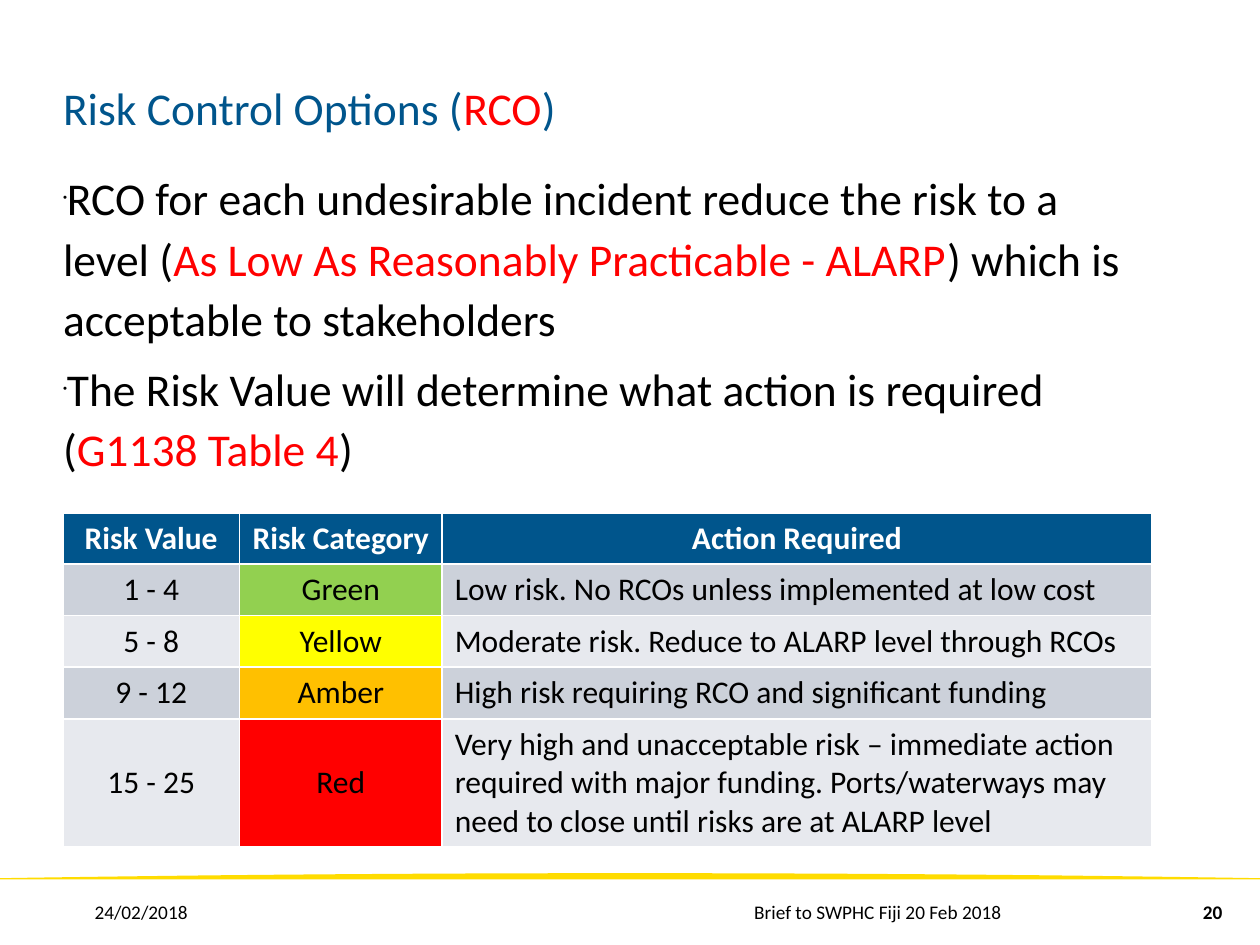
from lxml.etree import SubElement
from pptx import Presentation
from pptx.dml.color import RGBColor
from pptx.enum.text import MSO_ANCHOR, MSO_AUTO_SIZE, PP_ALIGN
from pptx.oxml.ns import qn
from pptx.util import Inches, Pt

BLUE, RED, BLACK, WHITE = "00558C", "FF0000", "000000", "FFFFFF"
GOLD = "FFDC00"
BANDS = ("CCD1DA", "E7E9EE")
LEFT, MID, RIGHT = PP_ALIGN.LEFT, PP_ALIGN.CENTER, PP_ALIGN.RIGHT

POINTS = [
    [("RCO for each undesirable incident reduce the risk to a level (", BLACK),
     ("As Low As Reasonably Practicable - ALARP", RED),
     (") which is acceptable to stakeholders", BLACK)],
    [("The Risk Value will determine what action is required (", BLACK),
     ("G1138 Table 4", RED), (")", BLACK)],
]
HEADS = ("Risk Value", "Risk Category", "Action Required")
RISKS = [
    ("1 - 4", "Green", "92D050", "Low risk. No RCOs unless implemented at low cost"),
    ("5 - 8", "Yellow", "FFFF00", "Moderate risk. Reduce to ALARP level through RCOs"),
    ("9 - 12", "Amber", "FFC000", "High risk requiring RCO and significant funding"),
    ("15 - 25", "Red", RED,
     "Very high and unacceptable risk – immediate action required with major "
     "funding. Ports/waterways may need to close until risks are at ALARP level"),
]


def color(code):
    return RGBColor.from_string(code)


def apply(item, values):
    for name, value in values.items():
        setattr(item, name, value)


def place(shape, box):
    names = ("left", "top", "width", "height")
    apply(shape, dict(zip(names, map(Inches, box))))


def write(para, runs, size, bold=False, align=LEFT):
    """Fill a paragraph with (text, colour) runs."""
    para.alignment = align
    for text, code in runs:
        run = para.add_run()
        run.text = text
        apply(run.font, {"name": "Calibri", "size": Pt(size), "bold": bold})
        run.font.color.rgb = color(code)


def set_frame(frame, anchor):
    apply(frame, {
        "margin_left": 0, "margin_top": 0, "margin_right": 0, "margin_bottom": 0,
        "word_wrap": True, "auto_size": MSO_AUTO_SIZE.NONE,
        "vertical_anchor": anchor,
    })


def add_dot(para):
    """Give a paragraph a tiny bullet with no indent."""
    props = para._p.get_or_add_pPr()
    apply_xml = {"marL": "0", "indent": "0"}
    for name, value in apply_xml.items():
        props.set(name, value)
    for tag, name, value in (("a:buSzPct", "val", "25000"),
                             ("a:buFont", "typeface", "Arial"),
                             ("a:buChar", "char", "•")):
        SubElement(props, qn(tag)).set(name, value)


def add_title(slide, box):
    title = slide.shapes.title
    place(title, box)
    set_frame(title.text_frame, MSO_ANCHOR.BOTTOM)
    runs = [("Risk Control Options (", BLUE), ("RCO", RED), (")", BLUE)]
    write(title.text_frame.paragraphs[0], runs, 26)


def add_body(slide, box):
    body = slide.placeholders[1]
    place(body, box)
    frame = body.text_frame
    set_frame(frame, MSO_ANCHOR.TOP)
    for i, runs in enumerate(POINTS):
        para = frame.add_paragraph() if i else frame.paragraphs[0]
        add_dot(para)
        apply(para, {"line_spacing": 1.1, "space_before": Pt(0),
                     "space_after": Pt(6)})
        write(para, runs, 26)


def fill_cell(cell, text, fill, code=BLACK, bold=False, align=MID):
    cell.fill.solid()
    cell.fill.fore_color.rgb = color(fill)
    cell.vertical_anchor = MSO_ANCHOR.MIDDLE
    write(cell.text_frame.paragraphs[0], [(text, code)], 18, bold, align)


def add_risks(slide, box):
    shape = slide.shapes.add_table(len(RISKS) + 1, len(HEADS), *map(Inches, box))
    table = shape.table
    for col, width in zip(table.columns, (1.4, 1.61, 5.63)):
        col.width = Inches(width)
    for row, height in zip(table.rows, (0.4, 0.41, 0.41, 0.41, 0.99)):
        row.height = Inches(height)
    for c, head in enumerate(HEADS):
        fill_cell(table.cell(0, c), head, BLUE, WHITE, True)
    for r, (value, name, fill, action) in enumerate(RISKS, 1):
        band = BANDS[(r - 1) % 2]
        fill_cell(table.cell(r, 0), value, band)
        fill_cell(table.cell(r, 1), name, fill)
        fill_cell(table.cell(r, 2), action, band, align=LEFT)


def add_swoosh(slide, box, steps=40):
    """Draw a band with a flat base and a gently arched top."""
    left, top, width, height = box
    base, edge = top + height, top + height * 0.8
    arch = [(left + width * i / steps,
             edge - (edge - top) * (1 - (2 * i / steps - 1) ** 2))
            for i in range(steps + 1)]
    dots = [(Inches(x), Inches(y))
            for x, y in arch + [(left + width, base), (left, base)]]
    pen = slide.shapes.build_freeform(*dots[0])
    pen.add_line_segments(dots[1:], close=True)
    shape = pen.convert_to_shape()
    shape.shadow.inherit = False
    shape.fill.solid()
    shape.fill.fore_color.rgb = color(GOLD)
    shape.line.fill.background()


def add_footer(slide, box):
    left, top, width, height = box
    for x, wide, text, bold, align in (
            (0.75, 2.32, "24/02/2018", False, LEFT),
            (3.11, 4.84, "Brief to SWPHC Fiji 20 Feb 2018", False, RIGHT),
            (width - 0.75, 0.75, "20", True, MID)):
        area = map(Inches, (left + x, top, wide, height))
        frame = slide.shapes.add_textbox(*area).text_frame
        set_frame(frame, MSO_ANCHOR.MIDDLE)
        write(frame.paragraphs[0], [(text, BLACK)], 11, bold, align)


def main():
    deck = Presentation()
    apply(deck, {"slide_width": Inches(10), "slide_height": Inches(7.5)})
    slide = deck.slides.add_slide(deck.slide_layouts[1])
    add_swoosh(slide, (0, 6.93, 10, 0.05))
    add_title(slide, (0.5, 0.36, 9, 0.71))
    add_body(slide, (0.5, 1.31, 8.4, 2.68))
    add_risks(slide, (0.5, 4.07, 8.64, 2.62))
    add_footer(slide, (0, 6.98, 10, 0.52))
    deck.save("out.pptx")


if __name__ == "__main__":
    main()
